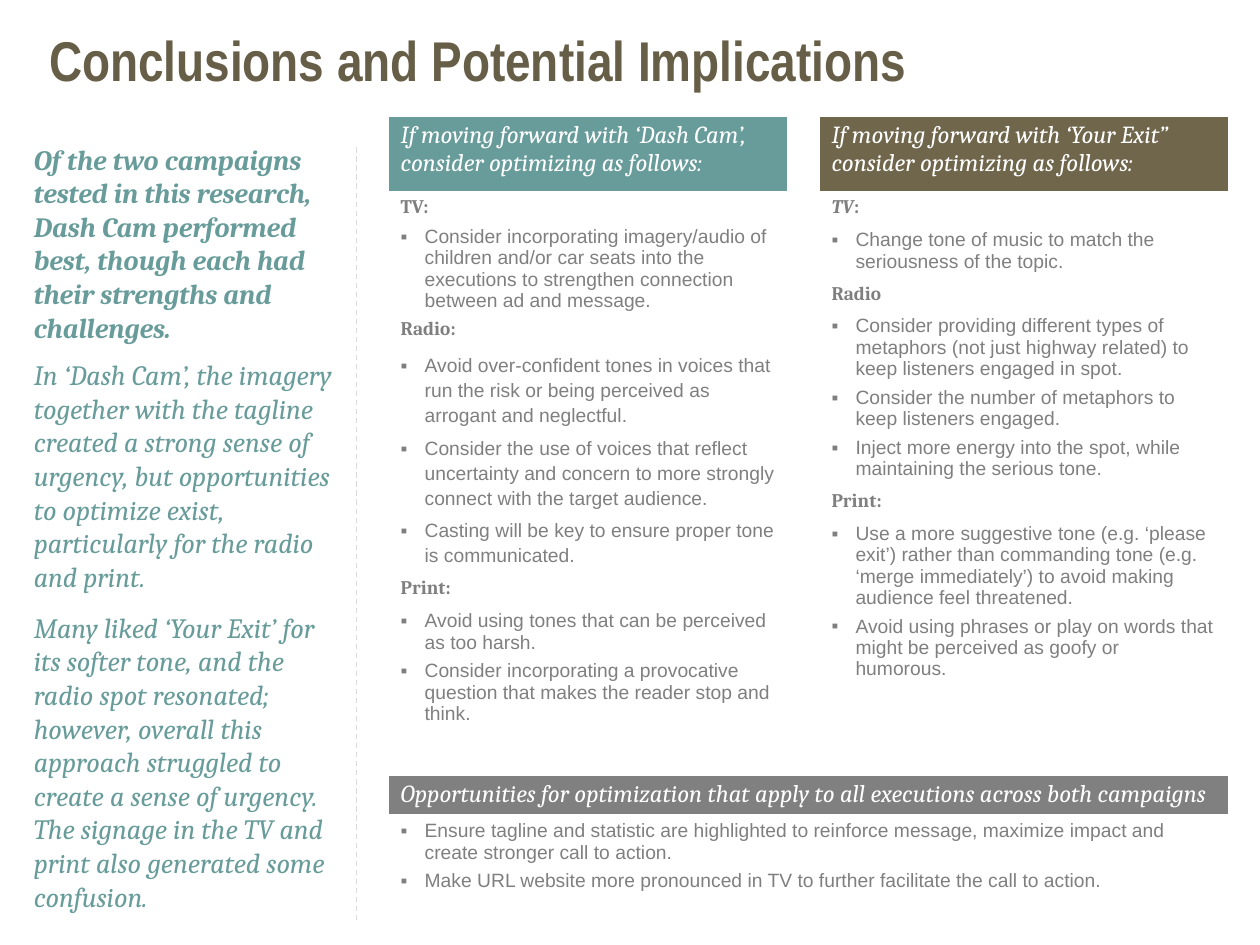
from pptx import Presentation
from pptx import util as u
from pptx.dml.color import RGBColor
from pptx.enum import dml, shapes, text
from pptx.oxml.ns import qn
from lxml import etree

Inches, Pt = u.Inches, u.Pt
TEAL = RGBColor(0x68, 0x9C, 0x9A)
OLIVE = RGBColor(0x6F, 0x66, 0x4C)
BROWN = RGBColor(0x67, 0x5E, 0x47)
GRAY = RGBColor(0x80, 0x80, 0x80)
BODY = RGBColor(0x7F, 0x7F, 0x7F)
RULE = RGBColor(0xD9, 0xD9, 0xD9)
WHITE = RGBColor(0xFF, 0xFF, 0xFF)
SERIF, SANS, TITLE = "Cambria", "Arial", "Arial Narrow"


class Deck:
    def __init__(self):
        self.prs = Presentation()
        self.prs.slide_width, self.prs.slide_height = Inches(10), Inches(7.5)
        self.s = self.prs.slides.add_slide(self.prs.slide_layouts[6])

    def run(self, p, words, size, font, color, bold=False, italic=False):
        r = p.add_run()
        r.text = words
        f = r.font
        f.size, f.name, f.bold, f.italic = Pt(size), font, bold, italic
        f.color.rgb = color

    def paragraph(self, tf, space=0, line=None):
        """Use the empty first paragraph, or add another one."""
        p = tf.paragraphs[0] if not tf.paragraphs[0].runs else tf.add_paragraph()
        p.alignment = text.PP_ALIGN.LEFT
        p.space_before = p.space_after = Pt(space)
        if line:
            p.line_spacing = Pt(line)
        return p

    def textbox(self, x, y, w, h, inset=None):
        tf = self.s.shapes.add_textbox(Inches(x), Inches(y), Inches(w), Inches(h)).text_frame
        tf.word_wrap = True
        if inset is not None:
            tf.margin_left = tf.margin_right = tf.margin_top = tf.margin_bottom = Inches(inset)
        return tf

    def heading(self, tf, words, italic=False):
        p = self.paragraph(tf, 4)
        self.run(p, words, 11, SERIF, BODY, bold=True, italic=italic)
        return p

    def bullet(self, tf, words, space=2, line=None):
        p = self.paragraph(tf, space, line)
        pPr = p._p.get_or_add_pPr()
        pPr.set("marL", str(Inches(0.19)))
        pPr.set("indent", str(-Inches(0.19)))
        etree.SubElement(pPr, qn("a:buFont")).set("typeface", SANS)
        etree.SubElement(pPr, qn("a:buChar")).set("char", "▪")
        self.run(p, words, 11, SANS, BODY)

    def banner(self, cell, words, color):
        self.fill(cell, color)
        self.run(self.paragraph(cell.text_frame), words, 14, SERIF, WHITE, italic=True)

    def fill(self, cell, color):
        cell.fill.solid()
        cell.fill.fore_color.rgb = color

    def table(self, x, y, cols, rows):
        frame = self.s.shapes.add_table(len(rows), len(cols), Inches(x), Inches(y),
                                        Inches(sum(cols)), Inches(sum(rows)))
        t = frame.table
        t.first_row = t.horz_banding = False
        for col, w in zip(t.columns, cols):
            col.width = Inches(w)
        for row, h in zip(t.rows, rows):
            row.height = Inches(h)
            for cell in row.cells:
                self.fill(cell, WHITE)
                cell.margin_top = cell.margin_bottom = Inches(0.04)
        return t

    def divider(self, x, y1, y2):
        c = self.s.shapes.add_connector(shapes.MSO_CONNECTOR.STRAIGHT,
                                        Inches(x), Inches(y1), Inches(x), Inches(y2))
        c.line.color.rgb, c.line.width = RULE, Pt(0.75)
        c.line.dash_style = dml.MSO_LINE.DASH
        etree.SubElement(c._element.spPr, qn("a:effectLst"))


def main():
    d = Deck()

    # Title
    tf = d.textbox(0.39, 0.2, 7.08, 0.79, inset=0)
    d.run(d.paragraph(tf), "Conclusions and Potential Implications", 32, TITLE, BROWN, bold=True)

    # Table frame: merged lower rows, thin spacer row
    t = d.table(3.08, 0.92, [3.17, 0.25, 3.25], [0.6, 4.3, 0.22, 0.32, 1.05])
    for row in (2, 3, 4):
        t.cell(row, 0).merge(t.cell(row, 2))
    spacer = t.cell(2, 0).text_frame.paragraphs[0]
    etree.SubElement(spacer._p, qn("a:endParaRPr")).set("sz", "600")

    # Banners
    d.banner(t.cell(0, 0), "If moving forward with ‘Dash Cam’, consider optimizing as follows:", TEAL)
    d.banner(t.cell(0, 2), "If moving forward with ‘Your Exit” consider optimizing as follows:", OLIVE)
    d.banner(t.cell(3, 0), "Opportunities for optimization that apply to all executions "
                           "across both campaigns", GRAY)

    # Dash Cam column
    tf = t.cell(1, 0).text_frame
    d.heading(tf, "TV: ")
    d.bullet(tf, "Consider incorporating imagery/audio of children and/or car seats into the "
                 "executions to strengthen connection between ad and message.", space=0)
    d.heading(tf, "Radio:")
    for words in (
        "Avoid over-confident tones in voices that run the risk or being perceived as "
        "arrogant and neglectful.",
        "Consider the use of voices that reflect uncertainty and concern to more strongly "
        "connect with the target audience. ",
        "Casting will be key to ensure proper tone is communicated. ",
    ):
        d.bullet(tf, words, line=14.4)
    d.heading(tf, "Print:")
    d.bullet(tf, "Avoid using tones that can be perceived as too harsh.")
    d.bullet(tf, "Consider incorporating a provocative question that makes the reader stop and think.")

    # Your Exit column
    tf = t.cell(1, 2).text_frame
    p = d.heading(tf, "TV", italic=True)
    d.run(p, ":", 11, SERIF, BODY, bold=True)
    d.bullet(tf, "Change tone of music to match the seriousness of the topic. ")
    d.heading(tf, "Radio ")
    for words in (
        "Consider providing different types of metaphors (not just highway related) to keep "
        "listeners engaged in spot.",
        "Consider the number of metaphors to keep listeners engaged.",
        "Inject more energy into the spot, while maintaining the serious tone. ",
    ):
        d.bullet(tf, words)
    d.heading(tf, "Print: ")
    d.bullet(tf, "Use a more suggestive tone (e.g. ‘please exit’) rather than commanding tone "
                 "(e.g. ‘merge immediately’) to avoid making audience feel threatened.")
    d.bullet(tf, "Avoid using phrases or play on words that might be perceived as goofy or humorous.")

    # Both campaigns
    tf = t.cell(4, 0).text_frame
    d.bullet(tf, "Ensure tagline and statistic are highlighted to reinforce message, maximize "
                 "impact and create stronger call to action.")
    d.bullet(tf, "Make URL website more pronounced in TV to further facilitate the call to action.")

    # Summary on the left
    tf = d.textbox(0.17, 1.08, 2.67, 6.28)
    for words, space, bold in (
        ("Of the two campaigns tested in this research, Dash Cam performed best, though each "
         "had their strengths and challenges.", 4, True),
        ("In ‘Dash Cam’, the imagery together with the tagline created a strong sense of "
         "urgency, but opportunities to optimize exist, particularly for the radio and print.",
         4, False),
        ("Many liked ‘Your Exit’ for its softer tone, and the radio spot resonated; however, "
         "overall this approach struggled to create a sense of urgency. The signage in the TV "
         "and print also generated some confusion.", 6, False),
    ):
        d.run(d.paragraph(tf, space), words, 16, SERIF, TEAL, bold=bold, italic=True)
    d.divider(2.83, 1.17, 7.33)

    d.prs.save("out.pptx")


if __name__ == "__main__":
    main()
